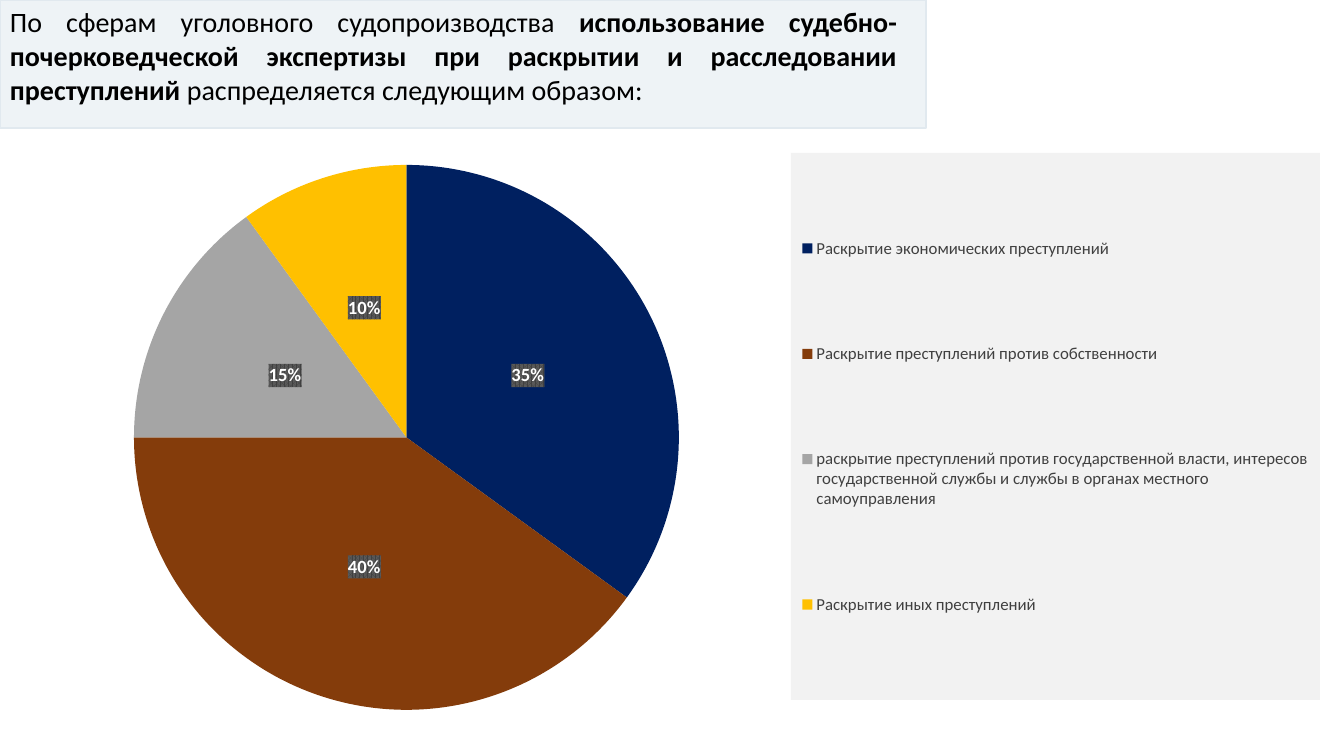
from pptx import Presentation
from pptx.chart.data import CategoryChartData
from pptx.dml.color import RGBColor
from pptx.enum.chart import XL_CHART_TYPE, XL_LABEL_POSITION, XL_LEGEND_POSITION
from pptx.enum.shapes import MSO_SHAPE
from pptx.enum.text import PP_ALIGN
from pptx.oxml import parse_xml
from pptx.oxml.ns import nsdecls, qn
from pptx.util import Emu, Pt

PIXELS_PER_INCH = 100.8
FONT = "Calibri"
HEADING = [
    ("По сферам уголовного судопроизводства ", False),
    ("использование судебно-почерковедческой экспертизы при раскрытии "
     "и расследовании преступлений ", True),
    ("распределяется следующим образом:", False),
]
CRIME_SHARES = [
    ("Раскрытие экономических преступлений", 35, "002060"),
    ("Раскрытие преступлений против собственности", 40, "843C0B"),
    ("раскрытие преступлений против государственной власти, интересов "
     "государственной службы и службы в органах местного самоуправления", 15, "A5A5A5"),
    ("Раскрытие иных преступлений", 10, "FFC000"),
]


def px(length):
    """Turn pixels into EMU."""
    return Emu(round(length * 914400 / PIXELS_PER_INCH))


def box(*lengths):
    """Turn left, top, width and height into EMU."""
    return [px(length) for length in lengths]


def color(value):
    """Turn a hex string into a colour."""
    return RGBColor.from_string(value)


def style_font(font, size, fill, bold=False):
    """Format a font."""
    font.name = FONT
    font.size = Pt(size)
    font.bold = bold
    font.color.rgb = color(fill)


def add_run(paragraph, text, **text_format):
    """Add formatted text to a paragraph."""
    run = paragraph.add_run()
    run.text = text
    style_font(run.font, **text_format)


def add_band(slide, bounds, fill, opacity):
    """Add a translucent rectangle with a thin outline."""
    shape = slide.shapes.add_shape(MSO_SHAPE.RECTANGLE, *box(*bounds))
    shape.shadow.inherit = False
    shape.fill.solid()
    shape.fill.fore_color.rgb = color(fill)
    shape.line.color.rgb = color(fill)
    shape.line.width = Pt(1)
    fill_color = shape.fill._xPr.find(qn("a:solidFill"))[0]
    fill_color.append(parse_xml(f'<a:alpha {nsdecls("a")} val="{opacity * 1000}"/>'))


def add_heading(slide, bounds, pieces):
    """Add a justified heading made of plain and bold pieces."""
    frame = slide.shapes.add_textbox(*box(*bounds)).text_frame
    frame.word_wrap = True
    paragraph = frame.paragraphs[0]
    paragraph.alignment = PP_ALIGN.JUSTIFY
    for text, bold in pieces:
        add_run(paragraph, text, size=20, fill="000000", bold=bold)


def manual_layout(chart_bounds, bounds, target=""):
    """Build a chart layout from slide bounds."""
    left, top, width, height = chart_bounds
    fractions = {
        "x": (bounds[0] - left) / width,
        "y": (bounds[1] - top) / height,
        "w": bounds[2] / width,
        "h": bounds[3] / height,
    }
    modes = "".join(f'<c:{axis}Mode val="edge"/>' for axis in "xy")
    values = "".join(f'<c:{name} val="{value:.4f}"/>' for name, value in fractions.items())
    return parse_xml(f'<c:layout {nsdecls("c")}><c:manualLayout>{target}{modes}{values}'
                     "</c:manualLayout></c:layout>")


def add_background(element, fill):
    """Put a fill before the text properties of a chart part."""
    element.find(qn("c:txPr")).addprevious(
        parse_xml(f'<c:spPr {nsdecls("c", "a")}>{fill}<a:ln><a:noFill/></a:ln></c:spPr>'))


def style_labels(plot):
    """Show bold percentages on a dark pattern."""
    plot.has_data_labels = True
    labels = plot.data_labels
    labels.show_percentage = True
    labels.show_value = False
    labels.number_format = "0%"
    labels.number_format_is_linked = False
    labels.position = XL_LABEL_POSITION.CENTER
    style_font(labels.font, 13.3, "FFFFFF", bold=True)
    add_background(labels._element, '<a:pattFill prst="pct75">'
                   '<a:fgClr><a:srgbClr val="404040"/></a:fgClr>'
                   '<a:bgClr><a:srgbClr val="595959"/></a:bgClr></a:pattFill>')


def style_legend(chart, layout):
    """Place the legend on a light grey panel."""
    chart.has_legend = True
    legend = chart.legend
    legend.position = XL_LEGEND_POSITION.RIGHT
    legend.include_in_layout = False
    style_font(legend.font, 12, "404040")
    element = legend._element
    for previous in element.findall(qn("c:layout")):
        element.remove(previous)
    element.find(qn("c:legendPos")).addnext(layout)
    add_background(element, '<a:solidFill><a:srgbClr val="F2F2F2"/></a:solidFill>')


def add_pie(slide, bounds, pie_bounds, legend_bounds, shares):
    """Add a pie chart with a legend."""
    data = CategoryChartData()
    data.categories = [name for name, _, _ in shares]
    data.add_series("Series 1", [value for _, value, _ in shares])
    chart = slide.shapes.add_chart(XL_CHART_TYPE.PIE, *box(*bounds), data).chart
    chart.has_title = False
    style_font(chart.font, 10, "000000")
    plot = chart.plots[0]
    plot.vary_by_categories = True
    for index, (_, _, fill) in enumerate(shares):
        point_format = plot.series[0].points[index].format
        point_format.fill.solid()
        point_format.fill.fore_color.rgb = color(fill)
        point_format.line.fill.background()
    style_labels(plot)
    style_legend(chart, manual_layout(bounds, legend_bounds))
    plot_area = chart._chartSpace.chart.plotArea
    for previous in plot_area.findall(qn("c:layout")):
        plot_area.remove(previous)
    plot_area.insert(0, manual_layout(bounds, pie_bounds, '<c:layoutTarget val="inner"/>'))


def main():
    """Build the slide."""
    presentation = Presentation()
    presentation.slide_width, presentation.slide_height = px(1344), px(756)
    slide = presentation.slides.add_slide(presentation.slide_layouts[6])
    add_band(slide, (0, 0, 926, 128), "E1E9EF", opacity=54)
    add_heading(slide, (0, 0, 907, 112), HEADING)
    add_pie(slide, (15, 151, 1309, 573), (134, 165, 545, 545), (791, 153, 529, 547),
            CRIME_SHARES)
    presentation.save("out.pptx")


if __name__ == "__main__":
    main()
